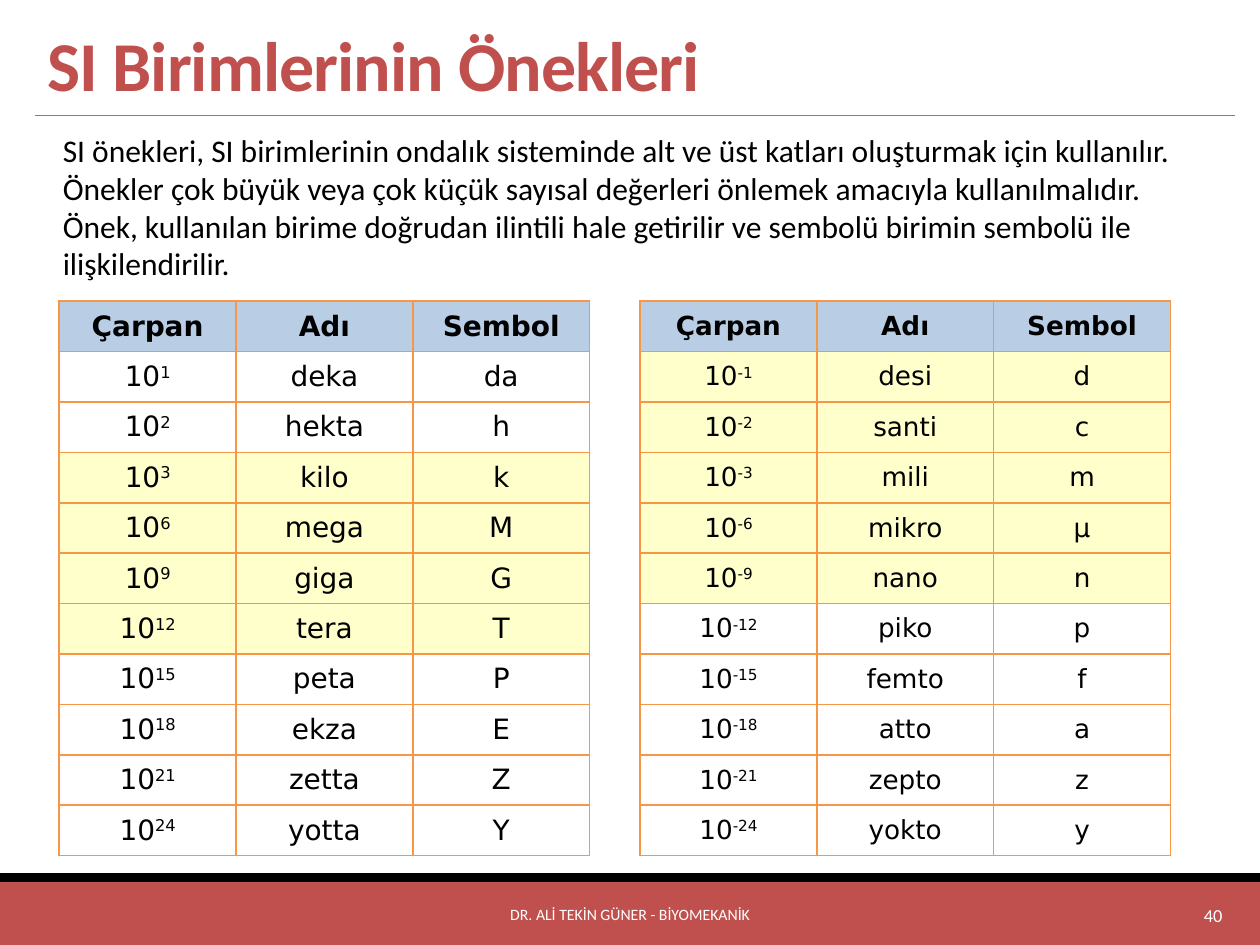
import pptx
import pptx.dml.color
import pptx.enum.shapes
import pptx.enum.text
import pptx.oxml
import pptx.oxml.ns
import pptx.util

ALIGN = pptx.enum.text.PP_ALIGN
ANCHOR = pptx.enum.text.MSO_ANCHOR
RED, BLACK, WHITE, GREY = "C0504D", "000000", "FFFFFF", "808080"
ORANGE, BLUE, YELLOW = "F79646", "B9CDE5", "FFFFCC"
NAMESPACE = pptx.oxml.ns.nsdecls("a")


def colour(value):
    return pptx.dml.color.RGBColor.from_string(value)


def write(para, text, ink, raised=False, **style):
    """Add a run with the given font values, as a superscript if raised."""
    span = para.add_run()
    span.text = text
    span.font.color.rgb = colour(ink)
    for name, value in style.items():
        setattr(span.font, name, value)
    if raised:
        span.font._element.set("baseline", "30000")
    return span


deck = pptx.Presentation()
deck.slide_width, deck.slide_height = pptx.util.Inches(10), pptx.util.Inches(7.5)
page = deck.slides.add_slide(deck.slide_layouts[6])
unit = deck.slide_width // 100  # the page is a grid of 100 columns and 75 rows

# Footer bands: top and height in grid units
for top, height, fill in [(70, 5, RED), (69.3, 0.7, BLACK)]:
    band = page.shapes.add_shape(
        pptx.enum.shapes.MSO_SHAPE.RECTANGLE, 0, int(top * unit), 100 * unit, int(height * unit))
    band.shadow.inherit = False
    band.fill.solid()
    band.fill.fore_color.rgb = colour(fill)
    band.line.fill.background()

rule = page.shapes.add_connector(
    pptx.enum.shapes.MSO_CONNECTOR.STRAIGHT,
    int(2.8 * unit), int(9.2 * unit), 98 * unit, int(9.2 * unit))
rule.line.color.rgb = colour(GREY)
rule.line.width = pptx.util.Pt(0.5)
rule._element.spPr.append(pptx.oxml.parse_xml(f"<a:effectLst {NAMESPACE}/>"))

# Text boxes
intro = (
    "SI önekleri, SI birimlerinin ondalık sisteminde alt ve üst katları oluşturmak için "
    "kullanılır. Önekler çok büyük veya çok küçük sayısal değerleri önlemek amacıyla "
    "kullanılmalıdır. Önek, kullanılan birime doğrudan ilintili hale getirilir ve sembolü "
    "birimin sembolü ile ilişkilendirilir.")
texts = [
    ((2.8, 0.5, 95.3, 8.4), "SI Birimlerinin Önekleri", 40, RED, True, ALIGN.LEFT, ANCHOR.BOTTOM),
    ((30.2, 70.6, 39.6, 4), "DR. ALİ TEKİN GÜNER - BİYOMEKANİK", 9, WHITE, False,
     ALIGN.CENTER, ANCHOR.MIDDLE),
    ((81.2, 70.6, 16.8, 4), "40", 10.5, WHITE, False, ALIGN.RIGHT, ANCHOR.MIDDLE),
    ((4, 9.9, 91.7, 13.1), intro, 18, BLACK, False, ALIGN.LEFT, ANCHOR.TOP),
]
for place, text, size, ink, bold, align, anchor in texts:
    box = page.shapes.add_textbox(*[int(length * unit) for length in place])
    box.text_frame.word_wrap = True
    box.text_frame.vertical_anchor = anchor
    para = box.text_frame.paragraphs[0]
    para.alignment = align
    span = write(para, text, ink, size=pptx.util.Pt(size), name="Calibri", bold=bold)
    if size == 40:
        para.line_spacing = 0.85
        span.font._element.set("spc", "-50")

# Prefix tables: left column, text size, sign, highlighted rows, names, symbols
powers = [1, 2, 3, 6, 9, 12, 15, 18, 21, 24]
tables = [
    (4.7, 16, "", range(3, 7),
     "deka hekta kilo mega giga tera peta ekza zetta yotta", "da h k M G T P E Z Y"),
    (50.8, 15, "-", range(1, 6),
     "desi santi mili mikro nano piko femto atto zepto yokto", "d c m µ n p f a z y"),
]
for left, size, sign, highlighted, names, symbols in tables:
    rows = [("Çarpan", "Adı", "Sembol")]
    rows += zip([f"{sign}{power}" for power in powers], names.split(), symbols.split())
    table = page.shapes.add_table(
        len(rows), 3, int(left * unit), int(23.9 * unit), int(42.1 * unit), 44 * unit).table
    table.first_row = table.horz_banding = False
    for row, values in enumerate(rows):
        for column, value in enumerate(values):
            cell = table.cell(row, column)
            for side in ("left", "right", "top", "bottom"):
                setattr(cell, f"margin_{side}", pptx.util.Inches(0.02))
            cell.vertical_anchor = ANCHOR.MIDDLE
            para = cell.text_frame.paragraphs[0]
            para.alignment = ALIGN.CENTER
            style = {"size": pptx.util.Pt(size), "name": "DejaVu Sans", "bold": row == 0}
            is_power = row > 0 and column == 0
            if is_power:
                write(para, "10", BLACK, **style)
            write(para, value, BLACK, raised=is_power, **style)
            for edge in ("lnL", "lnR", "lnT", "lnB"):
                cell._tc.get_or_add_tcPr().append(pptx.oxml.parse_xml(
                    f'<a:{edge} {NAMESPACE} w="12700"><a:solidFill>'
                    f'<a:srgbClr val="{ORANGE}"/></a:solidFill></a:{edge}>'))
            if row == 0 or row in highlighted:
                cell.fill.solid()
                cell.fill.fore_color.rgb = colour(YELLOW if row else BLUE)
            else:
                cell.fill.background()

deck.save("out.pptx")
